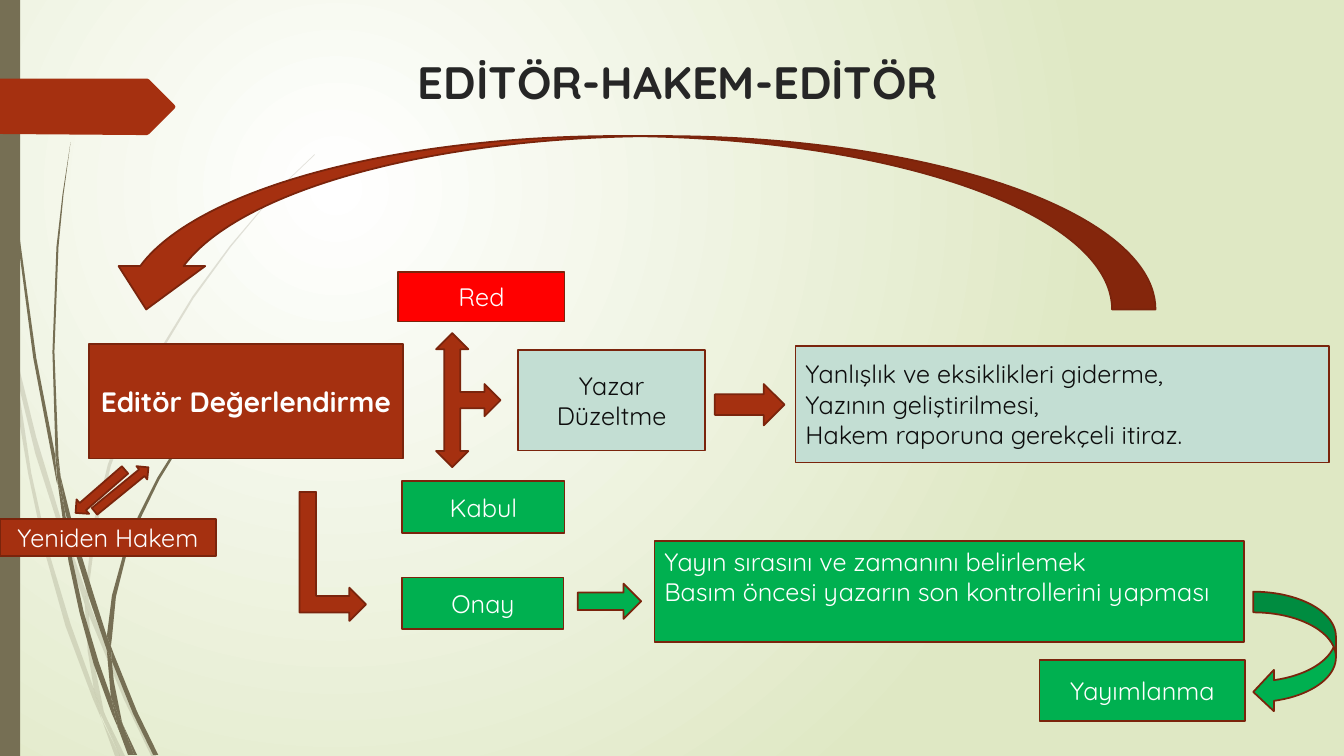
from dataclasses import dataclass

from lxml.etree import SubElement
from pptx import Presentation
from pptx.dml.color import RGBColor
from pptx.enum.shapes import MSO_SHAPE as Preset
from pptx.enum.text import MSO_ANCHOR as Anchor, MSO_AUTO_SIZE as AutoSize, PP_ALIGN as Align
from pptx.oxml.ns import qn
from pptx.shapes.base import BaseShape
from pptx.slide import Slide
from pptx.util import Emu, Pt

EMU_PER_PX = 9144
Points = tuple[tuple[int, int], ...]


@dataclass(frozen=True)
class Theme:
    font: str = "Quicksand"
    rust: str = "A53010"
    outline: str = "7A240C"
    red: str = "FF0000"
    green: str = "00B050"
    mint: str = "C3DED3"
    olive: str = "766F54"
    pale: str = "DFE8C4"
    white: str = "FFFFFF"
    ink: str = "0D0D0D"
    heading: str = "262626"
    title_size: float = 32.4
    strong_size: float = 20
    body_size: float = 18
    line_width: float = 1.25


THEME = Theme()


@dataclass(frozen=True)
class Box:
    text: str
    left: int
    top: int
    width: int
    height: int
    fill: str
    color: str = THEME.white
    size: float = THEME.body_size
    bold: bool = False
    align: Align = Align.CENTER
    anchor: Anchor = Anchor.MIDDLE


@dataclass(frozen=True)
class Arrow:
    preset: Preset
    left: int
    top: int
    width: int
    height: int
    rotation: float = 0
    fill: str = THEME.rust


BOXES = (
    Box("Editör Değerlendirme", 88, 341, 312, 114, THEME.rust, size=THEME.strong_size, bold=True),
    Box("Red", 395, 270, 165, 49, THEME.red),
    Box("Yazar Düzeltme", 514, 347, 185, 100, THEME.mint, THEME.ink),
    Box("Kabul", 399, 477, 161, 52, THEME.green),
    Box("Yanlışlık ve eksiklikleri giderme,\nYazının geliştirilmesi,\nHakem raporuna gerekçeli itiraz.",
        789, 343, 529, 116, THEME.mint, THEME.ink, align=Align.LEFT),
    Box("Onay", 399, 573, 160, 51, THEME.green),
    Box("Yayın sırasını ve zamanını belirlemek\nBasım öncesi yazarın son kontrollerini yapması",
        649, 537, 585, 100, THEME.green, align=Align.LEFT, anchor=Anchor.TOP),
    Box("Yayımlanma", 1031, 655, 204, 60, THEME.green),
    Box("Yeniden Hakem", 0, 515, 214, 37, THEME.rust),
)

ARROWS = (
    Arrow(Preset.LEFT_RIGHT_UP_ARROW, 398, 365, 133, 64, 90),
    Arrow(Preset.RIGHT_ARROW, 709, 381, 69, 41),
    Arrow(Preset.CURVED_RIGHT_ARROW, 538, -301, 172, 1044, 90),
    Arrow(Preset.BENT_UP_ARROW, 266, 519, 128, 66, 90),
    Arrow(Preset.RIGHT_ARROW, 573, 579, 63, 35, fill=THEME.green),
    Arrow(Preset.CURVED_LEFT_ARROW, 1243, 587, 82, 120, fill=THEME.green),
    Arrow(Preset.DOWN_ARROW, 90, 455, 19, 65, 49),
    Arrow(Preset.RIGHT_ARROW, 86, 477, 69, 17, 320.8),
)

FADED_STEMS: tuple[Points, ...] = (
    ((11, 350), (9, 322), (0, 282), (0, 299), (10, 344)),
    ((58, 522), (84, 599), (85, 586), (62, 520), (36, 434), (14, 345), (17, 376), (35, 450)),
    ((92, 607), (88, 596), (88, 610), (123, 694), (150, 750), (155, 750), (127, 692)),
    ((119, 750), (124, 750), (105, 711)),
    ((93, 683), (70, 619), (48, 546), (31, 469), (17, 376), (11, 350), (18, 411), (28, 470),
     (44, 546), (65, 621), (92, 693), (101, 714), (99, 707)),
    ((84, 599), (87, 646), (93, 683), (96, 692), (105, 711), (103, 706), (91, 646), (88, 608)),
    ((88, 584), (96, 522), (110, 462), (132, 405), (160, 349), (192, 296), (229, 245), (268, 198),
     (290, 175), (312, 154), (312, 153), (289, 175), (268, 197), (228, 244), (191, 294), (158, 348),
     (129, 403), (107, 461), (92, 522), (85, 584), (85, 586), (88, 596)),
    ((101, 714), (114, 750), (119, 750)),
    ((88, 608), (88, 596), (85, 586), (84, 599)),
    ((96, 692), (93, 683), (99, 707), (119, 750), (105, 711)),
)

DARK_STEMS: tuple[Points, ...] = (
    ((7, 110), (17, 233), (33, 355), (56, 477), (57, 481), (55, 457), (55, 453), (36, 355),
     (19, 232), (8, 109), (5, 48), (4, 0), (3, 0), (4, 48)),
    ((88, 592), (106, 645), (106, 631), (93, 590), (75, 532), (60, 472), (64, 505), (75, 549)),
    ((113, 649), (110, 641), (111, 656), (132, 708), (152, 749), (157, 749), (136, 706)),
    ((110, 691), (98, 657), (83, 607), (72, 556), (64, 505), (57, 477), (68, 557), (79, 608),
     (93, 659), (111, 708), (117, 722), (116, 717)),
    ((60, 472), (58, 453), (54, 349), (58, 245), (63, 193), (70, 141), (62, 193), (56, 245),
     (52, 349), (55, 449)),
    ((133, 749), (136, 749), (122, 719)),
    ((57, 477), (64, 505), (60, 472), (55, 449), (55, 453)),
    ((111, 633), (115, 592), (125, 552), (140, 513), (158, 476), (180, 440), (205, 406), (231, 374),
     (245, 359), (261, 344), (260, 344), (245, 358), (231, 373), (204, 405), (178, 439), (156, 474),
     (137, 512), (122, 551), (111, 591), (106, 631), (110, 641)),
    ((117, 722), (127, 749), (131, 749)),
    ((106, 645), (110, 691), (116, 706), (122, 719), (121, 716), (113, 676), (111, 656), (109, 651)),
    ((106, 645), (109, 651), (111, 656), (110, 641), (106, 631)),
    ((116, 706), (110, 691), (116, 717), (117, 722), (130, 749), (133, 749), (122, 719)),
)

RUST_TAB: Points = ((0, 78), (146, 78), (148, 79), (173, 104), (174, 106), (173, 108),
                    (148, 133), (146, 134), (136, 134), (0, 133))


def px(value: int) -> Emu:
    return Emu(value * EMU_PER_PX)


def write_text(shape: BaseShape, text: str, *, size: float, color: str, bold: bool = False,
               align: Align = Align.CENTER, anchor: Anchor = Anchor.MIDDLE) -> None:
    frame = shape.text_frame
    frame.word_wrap = True
    frame.auto_size = AutoSize.NONE
    frame.vertical_anchor = anchor
    frame.text = text
    for para in frame.paragraphs:
        para.alignment = align
        for span in para.runs:
            span.font.name = THEME.font
            span.font.size = Pt(size)
            span.font.bold = bold
            span.font.color.rgb = RGBColor.from_string(color)


def paint(shape: BaseShape, fill: str, outline: str | None = None) -> None:
    shape.shadow.inherit = False
    shape.fill.solid()
    shape.fill.fore_color.rgb = RGBColor.from_string(fill)
    if outline is None:
        shape.line.fill.background()
    else:
        shape.line.color.rgb = RGBColor.from_string(outline)
        shape.line.width = Pt(THEME.line_width)


def add_preset(page: Slide, preset: Preset, item: Box | Arrow) -> BaseShape:
    shape = page.shapes.add_shape(preset, px(item.left), px(item.top), px(item.width), px(item.height))
    paint(shape, item.fill, THEME.outline)
    return shape


def add_outline(shapes, points: Points, fill: str) -> BaseShape:
    builder = shapes.build_freeform(*points[0], scale=EMU_PER_PX)
    builder.add_line_segments(points[1:], close=True)
    shape = builder.convert_to_shape()
    paint(shape, fill)
    return shape


def add_stems(page: Slide, stems: tuple[Points, ...], opacity: int = 100) -> None:
    group = page.shapes.add_group_shape()
    for points in stems:
        stem = add_outline(group.shapes, points, THEME.olive)
        if opacity < 100:
            color = stem.fill.fore_color
            tint = stem.element.spPr.find(qn("a:solidFill")).find(qn("a:srgbClr"))
            SubElement(tint, qn("a:alpha"), val=str(opacity * 1000))


def add_background(page: Slide) -> None:
    fill = page.background.fill
    fill.gradient()
    for stop, color in zip(fill.gradient_stops, (THEME.white, THEME.pale)):
        stop.color.rgb = RGBColor.from_string(color)
    gradient = next(page.element.iter(qn("a:gradFill")))
    gradient.remove(gradient.find(qn("a:lin")))
    circle = SubElement(gradient, qn("a:path"), path="circle")
    SubElement(circle, qn("a:fillToRect"), l="50000", t="50000", r="100000", b="100000")


def main() -> None:
    deck = Presentation()
    deck.slide_width, deck.slide_height = px(1333), px(750)
    page = deck.slides.add_slide(deck.slide_layouts[5])
    add_background(page)
    add_stems(page, FADED_STEMS, opacity=20)
    add_stems(page, DARK_STEMS)
    band = page.shapes.add_shape(Preset.RECTANGLE, 0, 0, px(20), px(750))
    paint(band, THEME.olive)
    add_outline(page.shapes, RUST_TAB, THEME.rust)

    title = page.shapes.title
    title.left, title.top, title.width, title.height = px(86), px(49), px(1173), px(68)
    write_text(title, "EDİTÖR-HAKEM-EDİTÖR", size=THEME.title_size, color=THEME.heading,
               bold=True, anchor=Anchor.TOP)

    for box in BOXES:
        shape = add_preset(page, Preset.RECTANGLE, box)
        write_text(shape, box.text, size=box.size, color=box.color, bold=box.bold,
                   align=box.align, anchor=box.anchor)
    for arrow in ARROWS:
        add_preset(page, arrow.preset, arrow).rotation = arrow.rotation
    deck.save("out.pptx")


if __name__ == "__main__":
    main()
